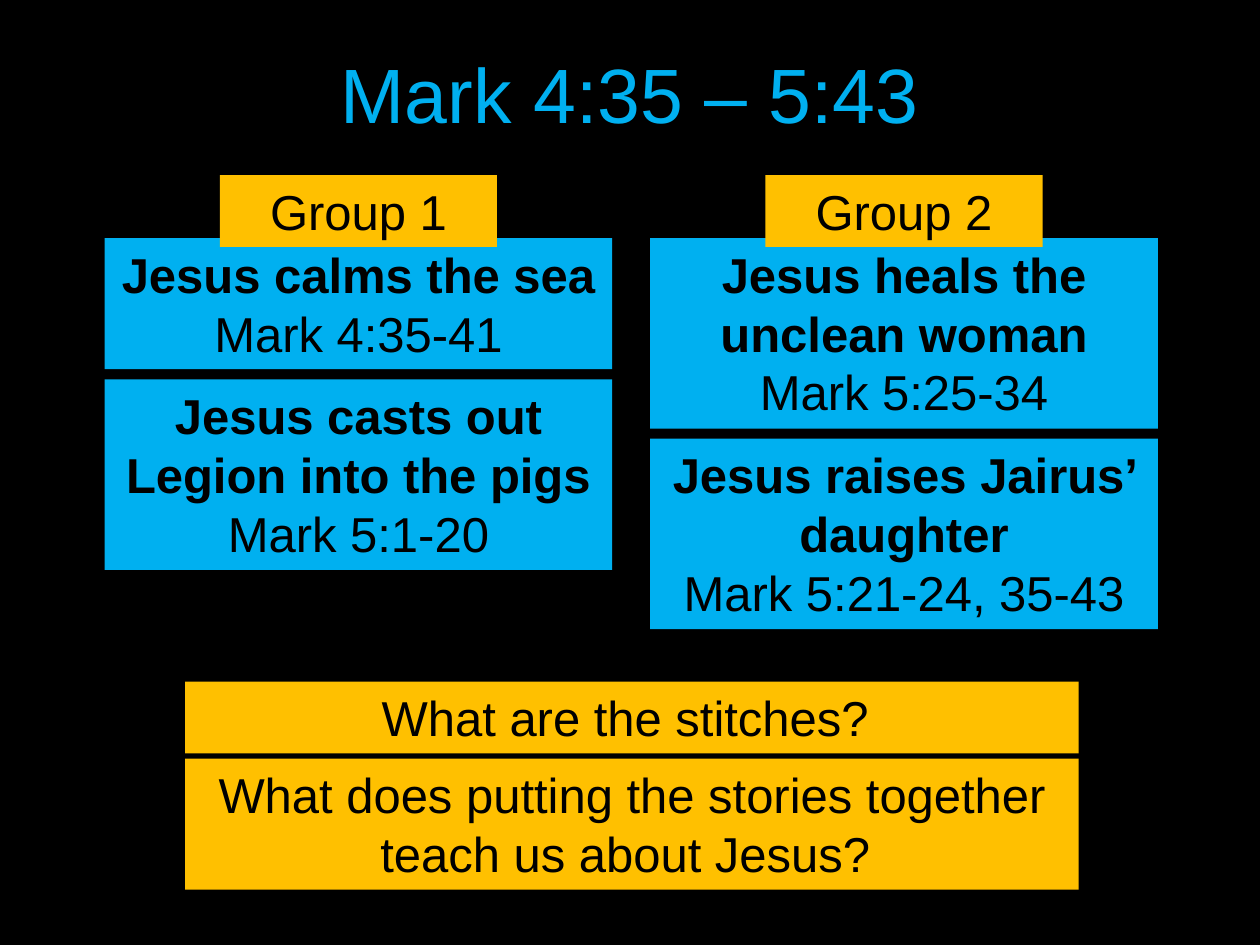
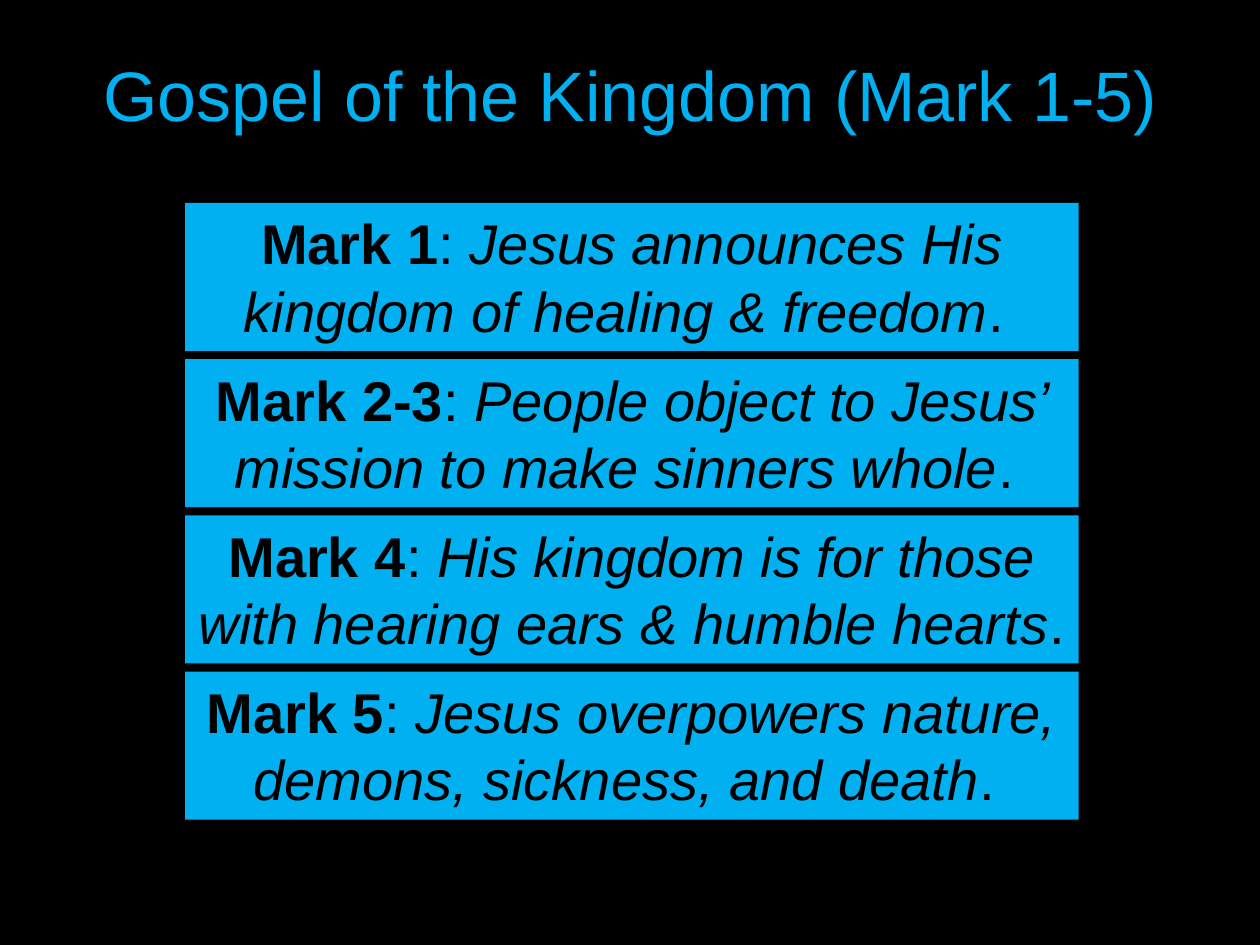
import pptx
import pptx.dml.color
import pptx.enum.shapes
import pptx.enum.text
import pptx.util

Inches, Pt = pptx.util.Inches, pptx.util.Pt
RGBColor = pptx.dml.color.RGBColor
Align, Anchor = pptx.enum.text.PP_ALIGN, pptx.enum.text.MSO_ANCHOR
AutoSize = pptx.enum.text.MSO_AUTO_SIZE

# Content: each group has (name, [(story, passage, text lines)])
GROUPS = [
    ("Group 1", [
        ("Jesus calms the sea", "Mark 4:35-41", 2),
        ("Jesus casts out Legion into the pigs", "Mark 5:1-20", 3),
    ]),
    ("Group 2", [
        ("Jesus heals the unclean woman", "Mark 5:25-34", 3),
        ("Jesus raises Jairus’ daughter", "Mark 5:21-24, 35-43", 3),
    ]),
]
QUESTIONS = [
    ("What are the stitches? ", 1),
    ("What does putting the stories together teach us about Jesus? ", 2),
]
CHAPTERS = [
    ("Mark 1", "Jesus announces His kingdom of healing & freedom"),
    ("Mark 2-3", "People object to Jesus’ mission to make sinners whole"),
    ("Mark 4", "His kingdom is for those with hearing ears & humble hearts"),
    ("Mark 5", "Jesus overpowers nature, demons, sickness, and death"),
]

# Shared style, lengths in inches
FONT = "Arial"
BLACK = RGBColor(0x00, 0x00, 0x00)
BLUE = RGBColor(0x00, 0xB0, 0xF0)
GOLD = RGBColor(0xFF, 0xC0, 0x00)
WIDTH, HEIGHT = 10, 7.5
WIDE_LEFT, WIDE_WIDTH = 1.47, 7.09
COLUMN_LEFT, COLUMN_WIDTH, COLUMN_PITCH = 0.83, 4.03, 4.33
LABEL_WIDTH = 2.2


def box_height(lines, size):
    return 0.1 + lines * size * 1.21 / 72


def write(frame, paragraphs, size, color):
    """Each paragraph is a list of (text, style); style holds 'b' and/or 'i'."""
    frame.word_wrap = True
    for index, runs in enumerate(paragraphs):
        paragraph = frame.paragraphs[0] if index == 0 else frame.add_paragraph()
        paragraph.alignment = Align.CENTER
        paragraph.font.name = FONT
        paragraph.font.size = Pt(size)
        paragraph.font.color.rgb = color
        for text, style in runs:
            run = paragraph.add_run()
            run.text = text
            run.font.bold = "b" in style
            run.font.italic = "i" in style


def add_slide(presentation, title, title_size):
    slide = presentation.slides.add_slide(presentation.slide_layouts[6])
    slide.background.fill.solid()
    slide.background.fill.fore_color.rgb = BLACK
    box = slide.shapes.add_textbox(Inches(0.69), Inches(0.4), Inches(8.62), Inches(0.77))
    box.text_frame.vertical_anchor = Anchor.MIDDLE
    write(box.text_frame, [[(title, "")]], title_size, BLUE)
    box.text_frame.paragraphs[0].line_spacing = 0.9
    return slide


def add_box(slide, left, top, width, lines, fill, paragraphs, size=28):
    """Add a filled box and return the position of its bottom edge."""
    height = box_height(lines, size)
    shape = slide.shapes.add_shape(
        pptx.enum.shapes.MSO_SHAPE.RECTANGLE,
        Inches(left), Inches(top), Inches(width), Inches(height))
    shape.shadow.inherit = False
    shape.fill.solid()
    shape.fill.fore_color.rgb = fill
    shape.line.fill.background()
    shape.text_frame.vertical_anchor = Anchor.TOP
    shape.text_frame.auto_size = AutoSize.SHAPE_TO_FIT_TEXT
    write(shape.text_frame, paragraphs, size, BLACK)
    return top + height


def build_groups(presentation):
    slide = add_slide(presentation, "Mark 4:35 – 5:43", 44)
    # Story columns, each with a label overlapping its first card
    for column, (name, stories) in enumerate(GROUPS):
        left = COLUMN_LEFT + column * COLUMN_PITCH
        top = 1.89
        for story, passage, lines in stories:
            top = 0.08 + add_box(slide, left, top, COLUMN_WIDTH, lines, BLUE,
                                 [[(story, "b")], [(passage, "")]])
        label_left = left + (COLUMN_WIDTH - LABEL_WIDTH) / 2
        add_box(slide, label_left, 1.39, LABEL_WIDTH, 1, GOLD, [[(name, "")]])
    # Questions
    top = 5.41
    for question, lines in QUESTIONS:
        top = 0.04 + add_box(slide, WIDE_LEFT, top, WIDE_WIDTH, lines, GOLD,
                             [[(question, "")]])


def build_chapters(presentation):
    slide = add_slide(presentation, "Gospel of the Kingdom (Mark 1-5)", 40)
    for row, (chapter, summary) in enumerate(CHAPTERS):
        runs = [(chapter, "b"), (": ", ""), (summary, "i"), (". ", "")]
        add_box(slide, WIDE_LEFT, 1.61 + row * 1.24, WIDE_WIDTH, 2, BLUE, [runs], 32)


def main():
    presentation = pptx.Presentation()
    presentation.slide_width = Inches(WIDTH)
    presentation.slide_height = Inches(HEIGHT)
    build_groups(presentation)
    build_chapters(presentation)
    presentation.save("out.pptx")


if __name__ == "__main__":
    main()
